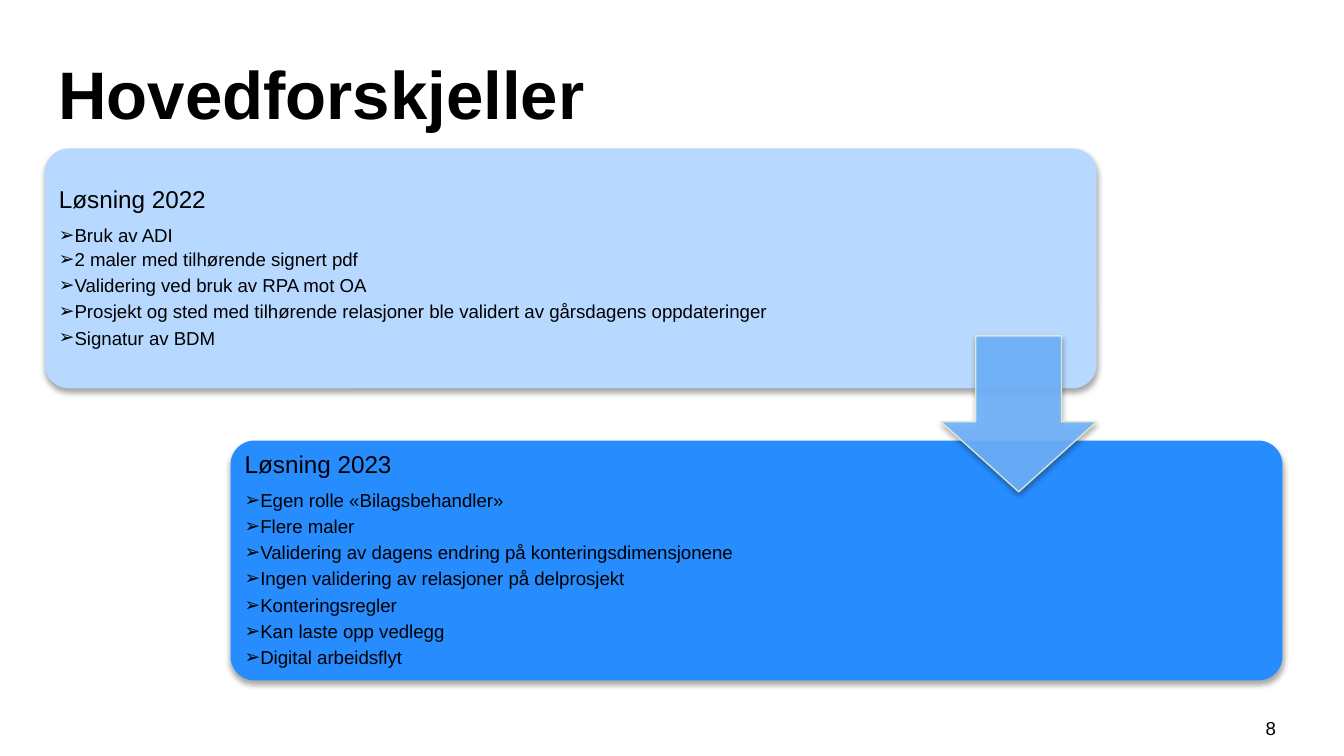
from dataclasses import dataclass

from lxml import etree
from pptx import Presentation
from pptx.dml.color import RGBColor
from pptx.enum.shapes import MSO_SHAPE
from pptx.enum.text import MSO_ANCHOR, MSO_AUTO_SIZE, PP_ALIGN
from pptx.oxml.ns import qn
from pptx.util import Pt

ROUNDED = MSO_SHAPE.ROUNDED_RECTANGLE
DOWN_ARROW = MSO_SHAPE.DOWN_ARROW
MIDDLE, BOTTOM = MSO_ANCHOR.MIDDLE, MSO_ANCHOR.BOTTOM
LEFT, CENTER = PP_ALIGN.LEFT, PP_ALIGN.CENTER
FONT = "Arial"
COLORS = {"text": "000000", "light": "B7D9FF", "strong": "278DFE",
          "arrow": "6FB3FE", "arrow_line": "E7EECD"}
CARD_WIDTH, CARD_HEIGHT = 563.5, 128.5
CARD_INSET = 4
INDENT = 4.5


@dataclass
class Solution:
    heading: str
    points: list[str]
    left: float
    top: float
    text_width: float
    color: str
    tight_points: tuple[int, ...] = ()


SOLUTIONS = [
    Solution("Løsning 2022", [
        "Bruk av ADI",
        "2 maler med tilhørende signert pdf",
        "Validering ved bruk av RPA mot OA",
        "Prosjekt og sted med tilhørende relasjoner ble validert av gårsdagens oppdateringer",
        "Signatur av BDM",
    ], 24, 79.5, 431, "light", (1,)),
    Solution("Løsning 2023", [
        "Egen rolle «Bilagsbehandler»",
        "Flere maler",
        "Validering av dagens endring på konteringsdimensjonene",
        "Ingen validering av relasjoner på delprosjekt",
        "Konteringsregler",
        "Kan laste opp vedlegg",
        "Digital arbeidsflyt",
    ], 123.5, 236, 373, "strong"),
]


def add_shadow(shape) -> None:
    """Give a shape a soft shadow below it."""
    effects = etree.SubElement(shape._element.spPr, qn("a:effectLst"))
    shadow = etree.SubElement(effects, qn("a:outerShdw"), blurRad=str(Pt(3.1)),
                              dist=str(Pt(1.8)), dir="5400000", rotWithShape="0")
    color = etree.SubElement(shadow, qn("a:srgbClr"), val=COLORS["text"])
    etree.SubElement(color, qn("a:alpha"), val="35000")


def set_alpha(fill_element, percent: int) -> None:
    """Set the opacity of a solid fill."""
    color = fill_element.find(qn("a:solidFill")).find(qn("a:srgbClr"))
    etree.SubElement(color, qn("a:alpha"), val=str(percent * 1000))


def add_filled_shape(page, kind, left: float, top: float, width: float,
                     height: float, color: str, adjustments: list[float]):
    """Draw a borderless filled shape."""
    shape = page.shapes.add_shape(kind, Pt(left), Pt(top), Pt(width), Pt(height))
    for index, value in enumerate(adjustments):
        shape.adjustments[index] = value
    shape.fill.solid()
    shape.fill.fore_color.rgb = RGBColor.from_string(COLORS[color])
    shape.line.fill.background()
    return shape


def write(para, text: str, *, size: float, bold: bool = False, align=LEFT,
          spacing: float = 1.0, after: float = 0, bullet: str = "") -> None:
    """Fill a paragraph with formatted text."""
    para.alignment = align
    para.line_spacing = spacing
    para.space_before, para.space_after = Pt(0), Pt(after)
    if bullet:
        properties = para._p.get_or_add_pPr()
        properties.set("marL", str(Pt(INDENT)))
        properties.set("indent", str(-Pt(INDENT)))
        etree.SubElement(properties, qn("a:buFont"), typeface=FONT)
        etree.SubElement(properties, qn("a:buChar"), char=bullet)
    span = para.add_run()
    span.text = text
    span.font.name, span.font.size, span.font.bold = FONT, Pt(size), bold
    span.font.color.rgb = RGBColor.from_string(COLORS["text"])


def format_frame(frame, anchor, horizontal: float, vertical: float) -> None:
    """Set wrapping, anchor and margins of a text frame."""
    frame.word_wrap = True
    frame.auto_size = MSO_AUTO_SIZE.NONE
    frame.vertical_anchor = anchor
    frame.margin_left = frame.margin_right = Pt(horizontal)
    frame.margin_top = frame.margin_bottom = Pt(vertical)


def add_solution(page, solution: Solution) -> None:
    """Draw a solution card with its heading and bullets."""
    card = add_filled_shape(page, ROUNDED, solution.left, solution.top, CARD_WIDTH,
                            CARD_HEIGHT, solution.color, [0.1])
    add_shadow(card)
    box = page.shapes.add_textbox(
        Pt(solution.left + CARD_INSET), Pt(solution.top + CARD_INSET),
        Pt(solution.text_width), Pt(CARD_HEIGHT - 2 * CARD_INSET))
    frame = box.text_frame
    format_frame(frame, MIDDLE, 3.6, 3.6)
    write(frame.paragraphs[0], solution.heading, size=13, spacing=0.9, after=5.2)
    for index, point in enumerate(solution.points):
        para = frame.add_paragraph()
        para.level = 1
        write(para, point, size=10, after=2, bullet="➢",
              spacing=0.9 if index in solution.tight_points else 1.0)


def add_arrow(page) -> None:
    """Draw the translucent arrow between the cards."""
    arrow = add_filled_shape(page, DOWN_ARROW, 504, 180, 83.5, 83.5, "arrow", [0.55, 0.45])
    arrow.line.color.rgb = RGBColor.from_string(COLORS["arrow_line"])
    arrow.line.width = Pt(0.75)
    properties = arrow._element.spPr
    set_alpha(properties, 90)
    set_alpha(properties.find(qn("a:ln")), 90)
    add_shadow(arrow)


def main() -> None:
    """Build and save the slide."""
    deck = Presentation()
    deck.slide_width, deck.slide_height = Pt(720), Pt(405)
    page = deck.slides.add_slide(deck.slide_layouts[5])

    title = page.shapes.title
    title.left, title.top, title.width, title.height = Pt(24), Pt(24), Pt(663), Pt(51)
    format_frame(title.text_frame, BOTTOM, 7.2, 3.6)
    write(title.text_frame.paragraphs[0], "Hovedforskjeller", size=36, bold=True)

    for solution in SOLUTIONS:
        add_solution(page, solution)
    add_arrow(page)

    number = page.shapes.add_textbox(Pt(667.5), Pt(379.5), Pt(26.5), Pt(21.5))
    format_frame(number.text_frame, MIDDLE, 7.2, 3.6)
    write(number.text_frame.paragraphs[0], "8", size=10, align=CENTER)

    deck.save("out.pptx")


if __name__ == "__main__":
    main()
